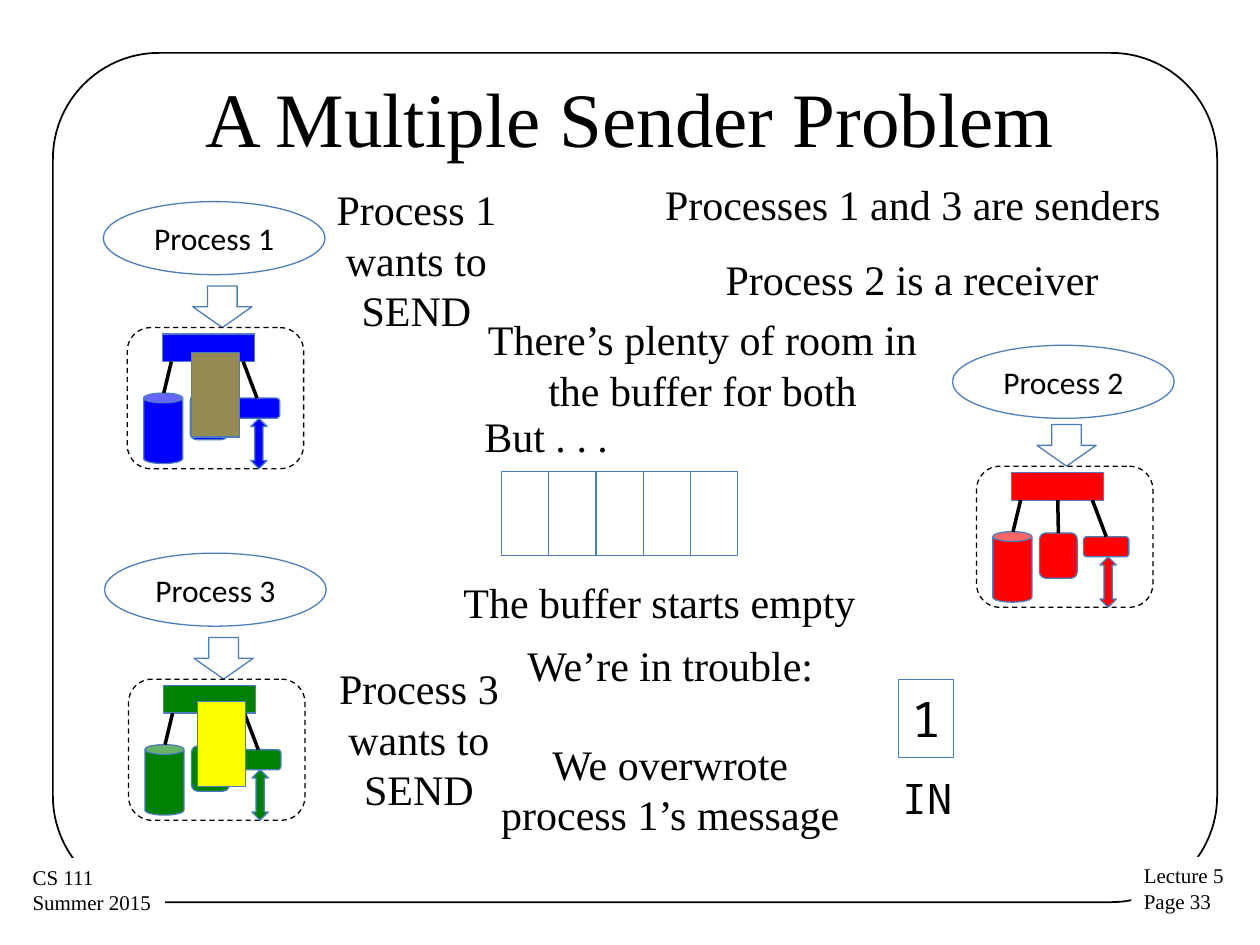
from lxml.etree import SubElement
from pptx import Presentation
from pptx.dml.color import RGBColor
from pptx.enum.dml import MSO_LINE
from pptx.enum.shapes import MSO_CONNECTOR, MSO_SHAPE as SHAPE
from pptx.enum.text import MSO_ANCHOR as ANCHOR, PP_ALIGN as ALIGN
from pptx.oxml.ns import qn
from pptx.util import Inches, Pt

SERIF, SANS, MONO = "Times New Roman", "Calibri", "Noto Sans Mono"
BLACK, WHITE, OUTLINE = "000000", "FFFFFF", "4B7EBC"


def color(hex_string):
    return RGBColor.from_string(hex_string)


def write(owner, text, size, font, align=ALIGN.CENTER, anchor=ANCHOR.MIDDLE, wrap=True):
    frame = owner.text_frame
    frame.text = text
    frame.word_wrap = wrap
    frame.vertical_anchor = anchor
    for paragraph in frame.paragraphs:
        paragraph.alignment = align
        for run in paragraph.runs:
            run.font.size = Pt(size)
            run.font.name = font
            run.font.color.rgb = color(BLACK)


def add_box(shapes, kind, left, top, width, height, fill=None, line=OUTLINE, weight=0.75):
    box = shapes.add_shape(kind, Inches(left), Inches(top), Inches(width), Inches(height))
    box.shadow.inherit = False
    if fill:
        box.fill.solid()
        box.fill.fore_color.rgb = color(fill)
    else:
        box.fill.background()
    if line:
        box.line.color.rgb = color(line)
        box.line.width = Pt(weight)
    else:
        box.line.fill.background()
    return box


def add_link(shapes, x1, y1, x2, y2):
    link = shapes.add_connector(
        MSO_CONNECTOR.STRAIGHT, Inches(x1), Inches(y1), Inches(x2), Inches(y2)
    )
    link.line.color.rgb = color(BLACK)
    link.line.width = Pt(2)
    SubElement(link._element.spPr, qn("a:effectLst"))
    return link


def add_caption(shapes, text, left, top, width, height=0.5, size=24, font=SERIF,
                centered=True, anchor=ANCHOR.TOP):
    caption = shapes.add_textbox(Inches(left), Inches(top), Inches(width), Inches(height))
    align = ALIGN.CENTER if centered else ALIGN.LEFT
    write(caption, text, size, font, align, anchor, wrap=centered)


def add_footer(shapes, text, left, top, width):
    footer = add_box(shapes, SHAPE.RECTANGLE, left, top, width, 0.51, WHITE, None)
    write(footer, text, 12, SERIF, ALIGN.LEFT, ANCHOR.TOP, wrap=False)


def add_process(shapes, name, left, top, fill, oval_rise=1.05, arrow_shift=0.24):
    oval = add_box(shapes, SHAPE.OVAL, left - 0.47, top - oval_rise, 1.76, 0.58)
    write(oval, name, 18, SANS)
    add_box(shapes, SHAPE.DOWN_ARROW, left + arrow_shift, top - 0.38, 0.47, 0.33, WHITE)
    cpu = add_box(shapes, SHAPE.RECTANGLE, left, top, 0.73, 0.22, fill)
    memory = add_box(shapes, SHAPE.ROUNDED_RECTANGLE, left + 0.22, top + 0.48, 0.3, 0.36, fill)
    machine = add_box(
        shapes, SHAPE.ROUNDED_RECTANGLE, left - 0.14, top - 0.19, 1.12, 1.4, line=BLACK
    )
    machine.rotation = 90
    machine.line.dash_style = MSO_LINE.DASH
    add_box(shapes, SHAPE.CAN, left - 0.15, top + 0.47, 0.31, 0.56, fill)
    network = shapes.add_group_shape().shapes
    port = add_box(network, SHAPE.ROUNDED_RECTANGLE, left + 0.57, top + 0.51, 0.36, 0.16, fill)
    add_box(network, SHAPE.UP_DOWN_ARROW, left + 0.7, top + 0.67, 0.13, 0.4, fill)
    add_link(shapes, left + 0.07, top + 0.22, left + 0.01, top + 0.47)
    port_link = add_link(shapes, left + 0.64, top + 0.22, left + 0.75, top + 0.51)
    port_link.end_connect(port, 0)
    return cpu, memory


def add_message(shapes, left, top, fill):
    add_box(shapes, SHAPE.RECTANGLE, left, top, 0.38, 0.67, fill)


def add_buffer(shapes, left, top, slots):
    buffer = shapes.add_group_shape().shapes
    for slot in range(slots):
        add_box(buffer, SHAPE.RECTANGLE, left + slot * 0.375, top, 0.375, 0.67)


def main():
    deck = Presentation()
    deck.slide_width, deck.slide_height = Inches(10), Inches(7.5)
    shapes = deck.slides.add_slide(deck.slide_layouts[6]).shapes

    border = add_box(
        shapes, SHAPE.ROUNDED_RECTANGLE, 0.42, 0.42, 9.24, 6.74, line=BLACK, weight=1
    )
    border.adjustments[0] = 0.125
    add_footer(shapes, "Lecture 5\nPage 33", 8.98, 6.8, 0.84)
    add_footer(shapes, "CS 111\nSummer 2015", 0.16, 6.81, 1.15)
    add_caption(shapes, "A Multiple Sender Problem", 0.5, 0.3, 9, 1.25,
                size=44, anchor=ANCHOR.MIDDLE)

    add_process(shapes, "Process 1", 1.29, 2.65, "0000FF")
    cpu, memory = add_process(shapes, "Process 2", 8.03, 3.75, "FF0000", 1.01, 0.2)
    memory_link = add_link(shapes, 8.39, 3.97, 8.39, 4.23)
    memory_link.begin_connect(cpu, 2)
    memory_link.end_connect(memory, 0)
    add_process(shapes, "Process 3", 1.3, 5.44, "008000")

    add_buffer(shapes, 3.98, 3.74, 5)
    add_message(shapes, 1.52, 2.8, "948A54")
    add_message(shapes, 1.57, 5.57, "FFFF00")
    in_index = add_box(shapes, SHAPE.RECTANGLE, 7.13, 5.39, 0.44, 0.62, WHITE)
    write(in_index, "1", 28, MONO)
    add_caption(shapes, "IN", 7.06, 6.08, 0.61, font=MONO, centered=False)

    for text, left, top, width in [
        ("Processes 1 and 3 are senders", 5.18, 1.37, 4.17),
        ("Process 2 is a receiver", 5.66, 1.96, 3.19),
        ("The buffer starts empty", 3.58, 4.53, 3.35),
    ]:
        add_caption(shapes, text, left, top, width, centered=False)

    for text, left, top, width, height in [
        ("Process 1 wants to SEND", 2.4, 1.41, 1.81, 1.31),
        ("Process 3 wants to SEND", 2.42, 5.21, 1.81, 1.31),
        ("There’s plenty of room in the buffer for both", 3.58, 2.44, 3.99, 0.91),
        ("But . . .", 2.34, 3.21, 3.99, 0.5),
        ("We’re in trouble:", 3.98, 5.03, 2.68, 0.5),
        ("We overwrote process 1’s message", 3.84, 5.81, 2.96, 0.91),
    ]:
        add_caption(shapes, text, left, top, width, height)

    deck.save("out.pptx")


if __name__ == "__main__":
    main()
